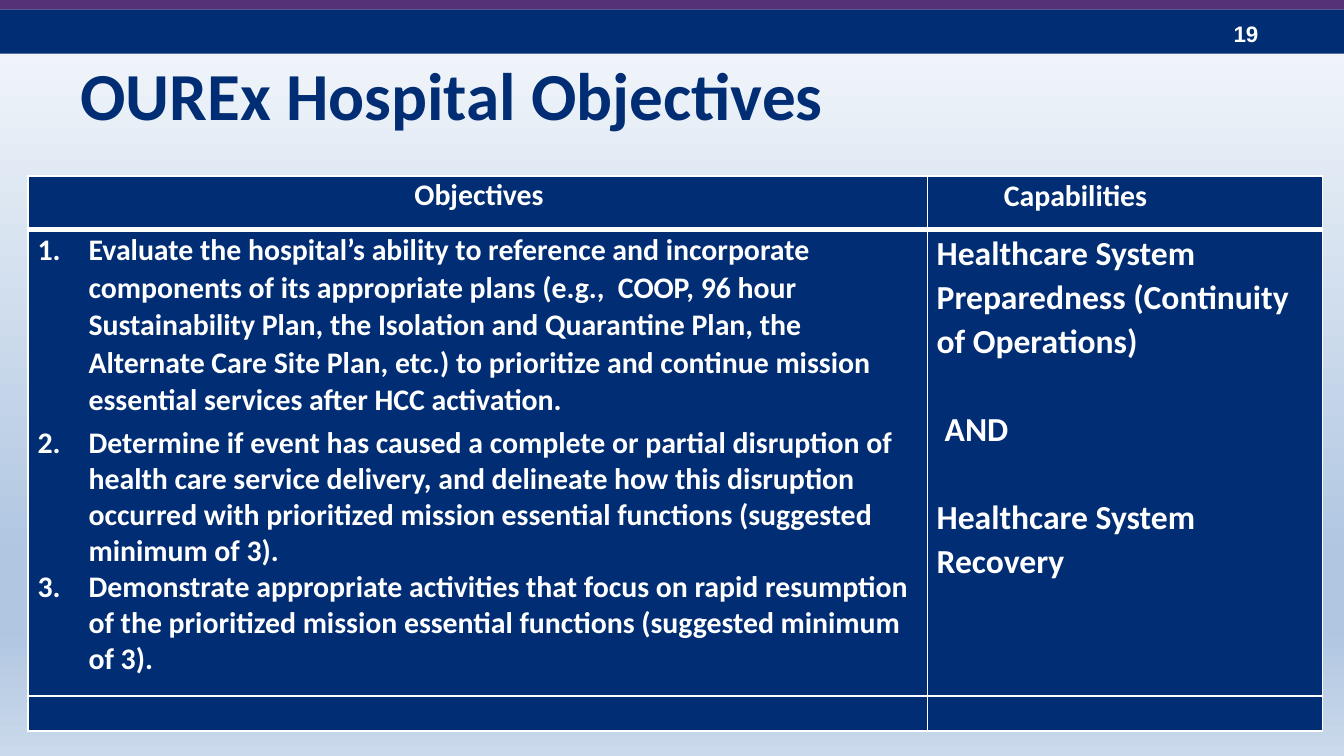
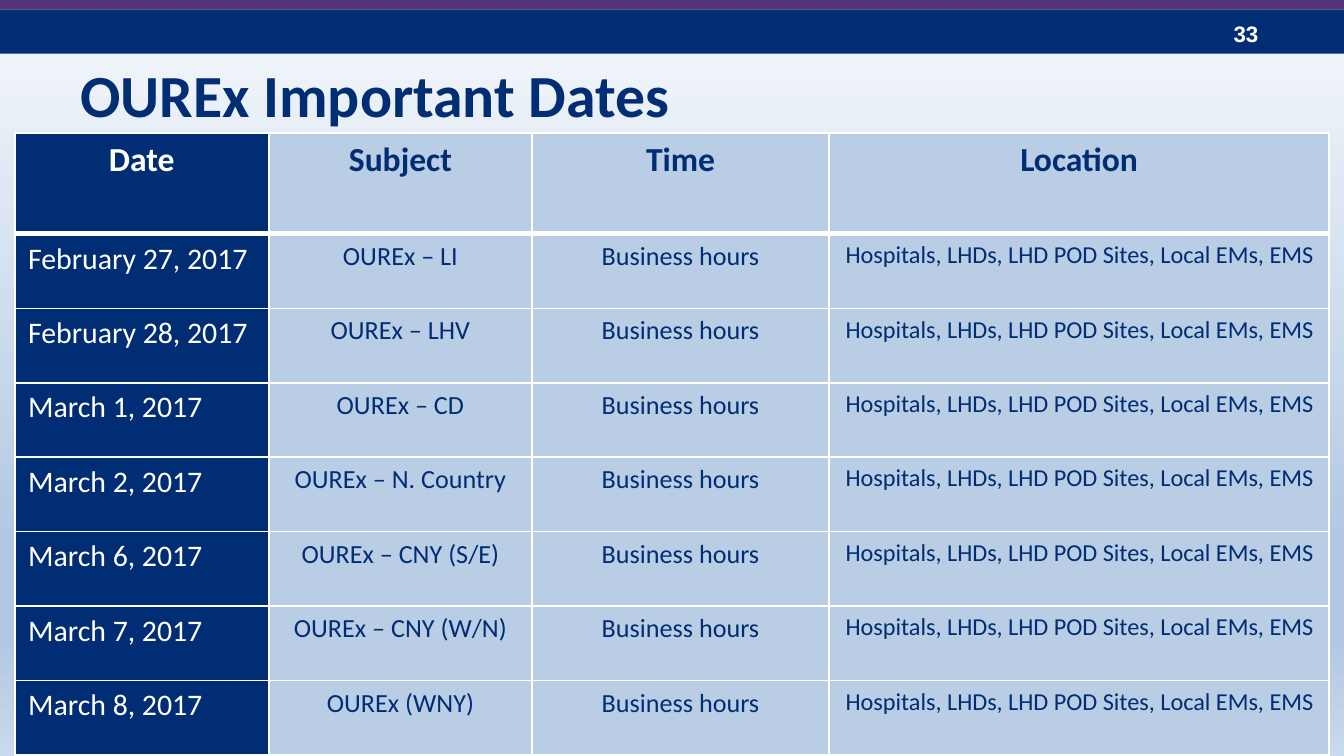
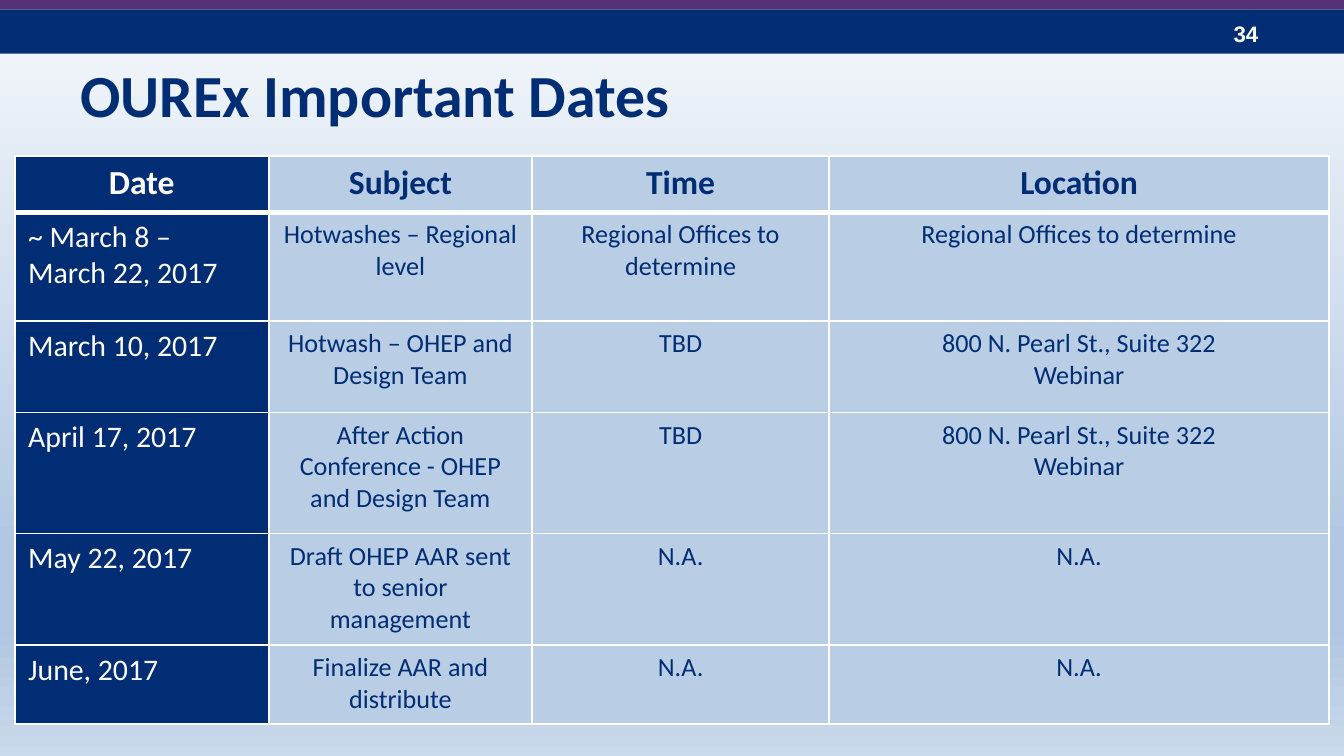
from pptx import Presentation
from pptx.dml.color import RGBColor
from pptx.enum.shapes import MSO_SHAPE as SHAPE
from pptx.enum.text import MSO_ANCHOR as ANCHOR, PP_ALIGN as ALIGN
from pptx.oxml import parse_xml
from pptx.oxml.ns import nsdecls, qn
from pptx.util import Inches, Pt

NAVY = RGBColor(0x00, 0x2D, 0x73)
PURPLE = RGBColor(0x55, 0x32, 0x78)
PALE = RGBColor(0xB9, 0xCD, 0xE5)
WHITE = RGBColor(0xFF, 0xFF, 0xFF)
BACKDROP = [(0, "F6F9FC"), (74, "B0C6E1"), (83, "B0C6E1"), (100, "CAD9EB")]

# Paragraph formats of the objectives table; left and hang are in inches
HEAD = {"size": 16, "align": ALIGN.CENTER, "line_spacing": 0.99}
HEAD_LEFT = {"size": 16, "left": 0.5, "line_spacing": 1.03, "space_after": Pt(3)}
STEP = {"size": 16, "left": 0.38, "hang": 0.38, "numbered": True,
        "line_spacing": 0.99}
STEP_FIRST = {**STEP, "line_spacing": 1.03, "space_after": Pt(3)}
CAPABILITY = {"size": 18, "line_spacing": 1.07}
CAPABILITY_NEXT = {**CAPABILITY, "space_before": Pt(23.5)}

OBJECTIVES = [
    [[("Objectives", HEAD)], [("Capabilities", HEAD_LEFT)]],
    [[("Evaluate the hospital’s ability to reference and incorporate components of "
       "its appropriate plans (e.g.,  COOP, 96 hour Sustainability Plan, the "
       "Isolation and Quarantine Plan, the Alternate Care Site Plan, etc.) to "
       "prioritize and continue mission essential services after HCC activation.",
       STEP_FIRST),
      ("Determine if event has caused a complete or partial disruption of health "
       "care service delivery, and delineate how this disruption occurred with "
       "prioritized mission essential functions (suggested minimum of 3).", STEP),
      ("Demonstrate appropriate activities that focus on rapid resumption of the "
       "prioritized mission essential functions (suggested minimum of 3).", STEP)],
     [("Healthcare System Preparedness (Continuity of Operations)", CAPABILITY),
      ("AND", {**CAPABILITY_NEXT, "left": 0.06}),
      ("Healthcare System Recovery", CAPABILITY_NEXT)]],
    [[], []],
]
OBJECTIVE_COLS = [6.69, 2.94]
OBJECTIVE_ROWS = [0.4, 3.47, 0.26]
OBJECTIVE_MARGINS = {"margin_left": 0.07, "margin_top": 0.01,
                     "margin_right": 0.05, "margin_bottom": 0}

DATE_HEAD = ("Date", "Subject", "Time", "Location")
DATE_COLS = [1.89, 1.96, 2.21, 3.72]
SITES = "Hospitals, LHDs, LHD POD Sites, Local EMs, EMS"
EXERCISES = [
    ("February 27, 2017", "OUREx – LI"),
    ("February 28, 2017", "OUREx – LHV"),
    ("March 1, 2017", "OUREx – CD"),
    ("March 2, 2017", "OUREx – N. Country"),
    ("March 6, 2017", "OUREx – CNY (S/E)"),
    ("March 7, 2017", "OUREx – CNY (W/N)"),
    ("March 8, 2017", "OUREx (WNY)"),
]
EXERCISE_HEAD, EXERCISE_HEIGHT = 0.75, 4.63
OFFICE = "800 N. Pearl St., Suite 322\nWebinar"
FOLLOW_UPS = [
    ("~ March 8 – March 22, 2017", "Hotwashes – Regional level",
     "Regional Offices to determine", "Regional Offices to determine"),
    ("March 10, 2017", "Hotwash – OHEP and Design Team", "TBD", OFFICE),
    ("April 17, 2017", "After Action Conference - OHEP and Design Team", "TBD", OFFICE),
    ("May 22, 2017", "Draft OHEP AAR sent to senior management", "N.A.", "N.A."),
    ("June, 2017", "Finalize AAR and distribute", "N.A.", "N.A."),
]
FOLLOW_UP_ROWS = [0.42, 0.81, 0.68, 0.9, 0.83, 0.59]


def set_font(font, size, color, bold=False, name="Calibri"):
    for key, value in {"size": Pt(size), "bold": bold, "name": name}.items():
        setattr(font, key, value)
    font.color.rgb = color


def paint_background(s):
    s.background.fill.gradient()
    grad = s.element.find(".//" + qn("a:gradFill"))
    stops = grad.find(qn("a:gsLst"))
    for stop in list(stops):
        stops.remove(stop)
    for percent, color in BACKDROP:
        stops.append(parse_xml(
            f'<a:gs {nsdecls("a")} pos="{percent * 1000}">'
            f'<a:srgbClr val="{color}"/></a:gs>'))
    grad.find(qn("a:lin")).set("ang", "5400000")


def add_band(s, top, height, color):
    sp = s.shapes.add_shape(SHAPE.RECTANGLE, 0, Inches(top), Inches(10), Inches(height))
    sp.shadow.inherit = False
    sp.fill.solid()
    sp.fill.fore_color.rgb = color
    sp.line.fill.background()


def add_text(s, text, box, anchor, *font):
    tf = s.shapes.add_textbox(*map(Inches, box)).text_frame
    tf.word_wrap = True
    tf.vertical_anchor = anchor
    r = tf.paragraphs[0].add_run()
    r.text = text
    set_font(r.font, *font)


def add_slide(prs, number, title, title_size):
    s = prs.slides.add_slide(prs.slide_layouts[6])
    paint_background(s)
    add_band(s, 0.07, 0.33, NAVY)
    add_text(s, str(number), (9.08, 0.1, 0.75, 0.3), ANCHOR.TOP, 12, WHITE, True, "Arial")
    add_band(s, -0.02, 0.09, PURPLE)
    add_text(s, title, (0.5, 0.23, 9, 0.94), ANCHOR.MIDDLE, title_size, NAVY, True)
    return s


def add_grid(s, left, top, cols, rows):
    """Add an empty table with the given column widths and row heights."""
    table = s.shapes.add_table(len(rows), len(cols), Inches(left), Inches(top),
                               Inches(sum(cols)), Inches(sum(rows))).table
    table.first_row = table.horz_banding = False
    for column, width in zip(table.columns, cols):
        column.width = Inches(width)
    for row, height in zip(table.rows, rows):
        row.height = Inches(height)
    return table


def style_cell(cell, row, fill):
    """Draw white borders, heavy under the heading row, then fill the cell."""
    widths = {"L": 1, "R": 1, "T": 3 if row == 1 else 1, "B": 3 if row == 0 else 1}
    tc_pr = cell._tc.get_or_add_tcPr()
    for side, width in widths.items():
        tc_pr.append(parse_xml(
            f'<a:ln{side} {nsdecls("a")} w="{Pt(width)}"><a:solidFill>'
            f'<a:srgbClr val="{WHITE}"/></a:solidFill></a:ln{side}>'))
    cell.fill.solid()
    cell.fill.fore_color.rgb = fill


def write_cell(cell, paragraphs, color, bold):
    tf = cell.text_frame
    for i, (text, style) in enumerate(paragraphs):
        p = tf.add_paragraph() if i else tf.paragraphs[0]
        for key in ("align", "line_spacing", "space_before", "space_after"):
            if key in style:
                setattr(p, "alignment" if key == "align" else key, style[key])
        p_pr = p._p.get_or_add_pPr()
        p_pr.set("marL", str(Inches(style.get("left", 0))))
        p_pr.set("indent", str(-Inches(style.get("hang", 0))))
        if style.get("numbered"):
            p_pr.append(parse_xml(f'<a:buAutoNum {nsdecls("a")} type="arabicPeriod"/>'))
        r = p.add_run()
        r.text = text
        set_font(r.font, style["size"], color, bold)
    if not paragraphs:
        tf.paragraphs[0]._p.append(parse_xml(f'<a:endParaRPr {nsdecls("a")} sz="1200"/>'))


def add_objectives(s):
    table = add_grid(s, 0.21, 1.31, OBJECTIVE_COLS, OBJECTIVE_ROWS)
    for i, row in enumerate(OBJECTIVES):
        for j, paragraphs in enumerate(row):
            cell = table.cell(i, j)
            for key, value in OBJECTIVE_MARGINS.items():
                setattr(cell, key, Inches(value))
            style_cell(cell, i, NAVY)
            write_cell(cell, paragraphs, WHITE, True)


def add_dates(s, top, heights, entries, location_size):
    table = add_grid(s, 0.11, top, DATE_COLS, heights)
    sizes = (16, 14, 14, location_size)
    for i, row in enumerate([DATE_HEAD, *entries]):
        for j, text in enumerate(row):
            style = {"size": sizes[j] if i else 18,
                     "align": ALIGN.LEFT if i and j == 0 else ALIGN.CENTER}
            fill, color = (PALE, NAVY) if j else (NAVY, WHITE)
            cell = table.cell(i, j)
            style_cell(cell, i, fill)
            write_cell(cell, [(line, style) for line in text.split("\n")], color, i == 0)


def main():
    prs = Presentation()
    prs.slide_width = Inches(10)
    prs.slide_height = prs.slide_width * 9 // 16
    add_objectives(add_slide(prs, 19, "OUREx Hospital Objectives", 36))
    exercises = [(*entry, "Business hours", SITES) for entry in EXERCISES]
    row_height = (EXERCISE_HEIGHT - EXERCISE_HEAD) / len(exercises)
    add_dates(add_slide(prs, 33, "OUREx Important Dates", 32),
              0.99, [EXERCISE_HEAD] + [row_height] * len(exercises), exercises, 13)
    add_dates(add_slide(prs, 34, "OUREx Important Dates", 32),
              1.16, FOLLOW_UP_ROWS, FOLLOW_UPS, 14)
    prs.save("out.pptx")


if __name__ == "__main__":
    main()
